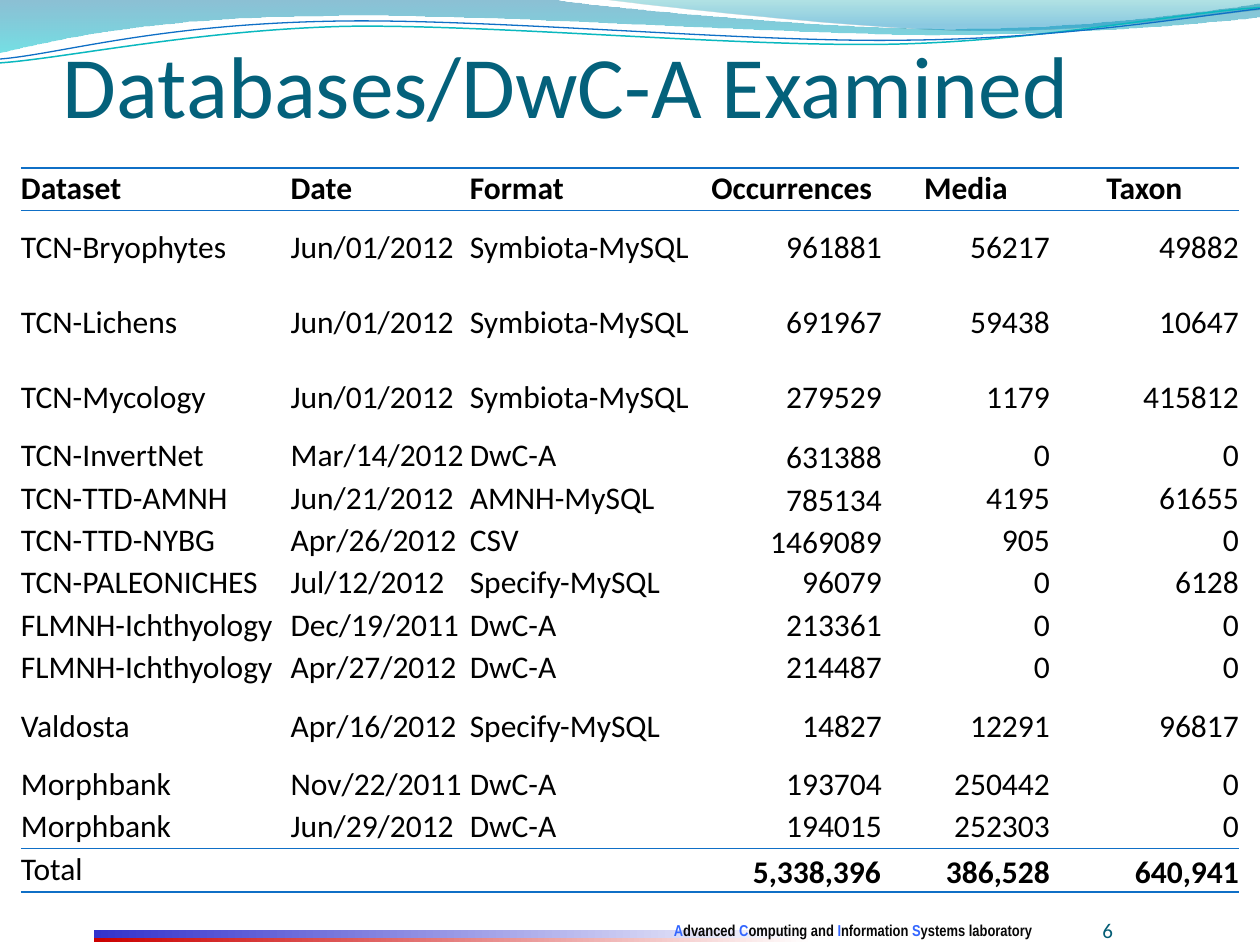
from lxml import etree
from pptx import Presentation
from pptx.dml.color import RGBColor
from pptx.enum.shapes import MSO_SHAPE
from pptx.enum.text import MSO_ANCHOR, MSO_AUTO_SIZE, PP_ALIGN
from pptx.oxml.ns import qn
from pptx.util import Pt

LEFT, CENTER, RIGHT = PP_ALIGN.LEFT, PP_ALIGN.CENTER, PP_ALIGN.RIGHT
TOP, MIDDLE, BOTTOM = MSO_ANCHOR.TOP, MSO_ANCHOR.MIDDLE, MSO_ANCHOR.BOTTOM
GROW = MSO_AUTO_SIZE.SHAPE_TO_FIT_TEXT
RECTANGLE = MSO_SHAPE.RECTANGLE
BLUE, BLACK = "0F6FC6", "000000"
PLAIN_TABLE_STYLE = "{2D5ABB26-0587-4C30-8999-92F81FD0307C}"

# Content
TITLE = "Databases/DwC-A Examined"
PAGE_NUMBER = "6"
LABORATORY = ["Advanced ", "Computing and ", "Information ", "Systems laboratory"]
HEADER = ("Dataset", "Date", "Format", "Occurrences", "Media", "Taxon")
DATASETS = [
    ("TCN-Bryophytes", "Jun/01/2012", "Symbiota-MySQL", "961881", "56217", "49882"),
    ("TCN-Lichens", "Jun/01/2012", "Symbiota-MySQL", "691967", "59438", "10647"),
    ("TCN-Mycology", "Jun/01/2012", "Symbiota-MySQL", "279529", "1179", "415812"),
    ("TCN-InvertNet", "Mar/14/2012", "DwC-A", "631388", "0", "0"),
    ("TCN-TTD-AMNH", "Jun/21/2012", "AMNH-MySQL", "785134", "4195", "61655"),
    ("TCN-TTD-NYBG", "Apr/26/2012", "CSV", "1469089", "905", "0"),
    ("TCN-PALEONICHES", "Jul/12/2012", "Specify-MySQL", "96079", "0", "6128"),
    ("FLMNH-Ichthyology", "Dec/19/2011", "DwC-A", "213361", "0", "0"),
    ("FLMNH-Ichthyology", "Apr/27/2012", "DwC-A", "214487", "0", "0"),
    ("Valdosta", "Apr/16/2012", "Specify-MySQL", "14827", "12291", "96817"),
    ("Morphbank", "Nov/22/2011", "DwC-A", "193704", "250442", "0"),
    ("Morphbank", "Jun/29/2012", "DwC-A", "194015", "252303", "0"),
]
TOTAL = ("Total", "", "", "5,338,396", "386,528", "640,941")
COLUMN_WIDTHS = (154.1, 102.4, 132.5, 103, 96, 108)
ROW_HEIGHT, TALL_ROW_HEIGHT, TOTAL_HEIGHT = 24.2, 42.8, 24.9
TALL_ROWS = (1, 2, 3, 10)
LOW_OCCURRENCES = (4, 5, 6)  # rows whose occurrence count sits at the bottom

# Outlines: a pair is a straight step, six numbers are a Bezier curve
WAVES = [
    ([(0, 0), (317, 0), (343, 4.3, 478, 16.6, 546, 16.6),
      (614, 16.6, 690, 7.2, 720, 2.2), (721, 10),
      (708, 11.5, 626, 20.2, 537, 20.2), (447, 20.2, 275, 7.2, 185, 9.4),
      (93, 9.4, 33, 22.3, -0.7, 30.2)],
     [(0, "0074A1", 45), (1, "00C6CF", 55)]),
    ([(345, 0), (366, 2.9, 491, 16.6, 554, 17.3),
      (616, 18.7, 692, 8.6, 720, 5.8), (720, 0)],
     [(0, "00A1A9", 30), (0.8, "008BBF", 45)]),
]
RIPPLES = [
    ([(-0.7, 36), (34.6, 33.8, 111, 17.3, 197, 15.1),
      (282, 13.7, 426, 27.4, 513, 25.2), (600, 23, 678, 6.5, 721, 4.3)],
     "0AB8BF", 0.85),
    ([(0, 33.8), (33.8, 31, 87, 14.4, 187, 12.2),
      (274, 10, 428, 24.5, 516, 23), (605, 22.3, 678, 10, 720, 5)],
     BLUE, 0.75),
]
FOOTER_BARS = [(531.4, 4.4, "3333CC"), (535.8, 2.6, "CC0000")]  # top, height, colour


def color(hex_string):
    return RGBColor.from_string(hex_string)


def write(frame, spans, size=18, font="Calibri", bold=False, align=LEFT,
          anchor=MIDDLE, margins=(0, 0)):
    """Fill a text frame or table cell with (text, colour) spans."""
    frame.vertical_anchor = anchor
    frame.margin_left = frame.margin_right = Pt(margins[0])
    frame.margin_top = frame.margin_bottom = Pt(margins[1])
    para = getattr(frame, "text_frame", frame).paragraphs[0]
    para.alignment = align
    para.font.size, para.font.name = Pt(size), font
    for text, ink in spans:
        span = para.add_run()
        span.text = text
        span.font.size, span.font.name, span.font.bold = Pt(size), font, bold
        span.font.color.rgb = color(ink)


def add_text(page, spans, left, top, width, height, **style):
    box = page.shapes.add_textbox(Pt(left), Pt(top), Pt(width), Pt(height))
    box.text_frame.word_wrap = True
    write(box.text_frame, spans, **style)
    return box


def set_gradient(shape, stops, angle):
    shape.fill.gradient()
    shape.fill.gradient_angle = angle
    for stop, (position, tone, _) in zip(shape.fill.gradient_stops, stops):
        stop.position = position
        stop.color.rgb = color(tone)
    for node, (_, _, opacity) in zip(shape._element.iter(qn("a:gs")), stops):
        if opacity < 100:
            etree.SubElement(node[0], qn("a:alpha"), val=str(opacity * 1000))
    shape.line.fill.background()
    shape.shadow.inherit = False


def add_outline(page, steps, close):
    """Build the outline from its corners, then bend the curved steps."""
    corners = [(Pt(step[-2]), Pt(step[-1])) for step in steps]
    builder = page.shapes.build_freeform(*corners[0])
    builder.add_line_segments(corners[1:], close=close)
    shape = builder.convert_to_shape()
    shape.shadow.inherit = False
    segments = list(shape._element.iter(qn("a:lnTo")))
    for segment, step in zip(segments, steps[1:]):
        if len(step) == 6:
            curve = etree.Element(qn("a:cubicBezTo"))
            for x, y in zip(step[::2], step[1::2]):
                etree.SubElement(curve, qn("a:pt"), x=str(Pt(x) - shape.left),
                                 y=str(Pt(y) - shape.top))
            segment.getparent().replace(segment, curve)
    return shape


def rule_cell(cell):
    """Draw the lines above and below a cell."""
    properties = cell._tc.get_or_add_tcPr()
    for index, side in enumerate(("a:lnT", "a:lnB")):
        line = etree.Element(qn(side), w=str(Pt(1)))
        fill = etree.SubElement(line, qn("a:solidFill"))
        etree.SubElement(fill, qn("a:srgbClr"), val=BLUE)
        properties.insert(index, line)


def add_dataset_table(page):
    rows = [HEADER, *DATASETS, TOTAL]
    last = len(rows) - 1
    heights = [TALL_ROW_HEIGHT if r in TALL_ROWS else ROW_HEIGHT for r in range(last)]
    heights.append(TOTAL_HEIGHT)
    frame = page.shapes.add_table(len(rows), len(HEADER), Pt(12), Pt(96),
                                  Pt(sum(COLUMN_WIDTHS)), Pt(sum(heights)))
    table = frame.table
    table.first_row = table.horz_banding = False
    next(frame._element.iter(qn("a:tableStyleId"))).text = PLAIN_TABLE_STYLE
    for column, width in zip(table.columns, COLUMN_WIDTHS):
        column.width = Pt(width)
    for r, texts in enumerate(rows):
        table.rows[r].height = Pt(heights[r])
        for c, text in enumerate(texts):
            cell = table.cell(r, c)
            number = c >= 3
            sum_cell = number and r == last
            low = sum_cell or c == 3 and r in LOW_OCCURRENCES
            write(cell, [(text, BLACK)] if text else [],
                  bold=r == 0 or sum_cell,
                  align=LEFT if not number else CENTER if r == 0 else RIGHT,
                  anchor=BOTTOM if low else MIDDLE,
                  margins=(0.6, 0) if sum_cell and c == 3 else (0, 0))
            cell.fill.background()
            if r in (0, last):
                rule_cell(cell)


def main():
    deck = Presentation()
    deck.slide_width, deck.slide_height = Pt(720), Pt(540)
    page = deck.slides.add_slide(deck.slide_layouts[6])

    # Waves along the top
    for steps, stops in WAVES:
        set_gradient(add_outline(page, steps, True), stops, 270)
    for steps, tone, width in RIPPLES:
        ripple = add_outline(page, steps, False)
        ripple.fill.background()
        ripple.line.color.rgb, ripple.line.width = color(tone), Pt(width)

    # Footer
    for top, height, tone in FOOTER_BARS:
        bar = page.shapes.add_shape(RECTANGLE, Pt(53.8), Pt(top), Pt(411), Pt(height))
        set_gradient(bar, [(0, tone, 100), (1, "FFFFFF", 100)], 0)
    laboratory = [span for word in LABORATORY
                  for span in ((word[0], "3366FF"), (word[1:], "080808"))]
    credit = add_text(page, laboratory, 378, 522.7, 221, 18, size=9,
                      font="Arial Narrow", bold=True, anchor=TOP, margins=(7.2, 3.6))
    credit.text_frame.word_wrap = False
    credit.text_frame.auto_size = GROW

    # Title, table and page number
    add_text(page, [(TITLE, "04617B")], 36, 5.8, 648, 72, size=50, anchor=BOTTOM)
    add_dataset_table(page)
    add_text(page, [(PAGE_NUMBER, "045D75")], 600, 510, 36, 28.8, size=12,
             align=RIGHT, anchor=BOTTOM)
    deck.save("out.pptx")


if __name__ == "__main__":
    main()
